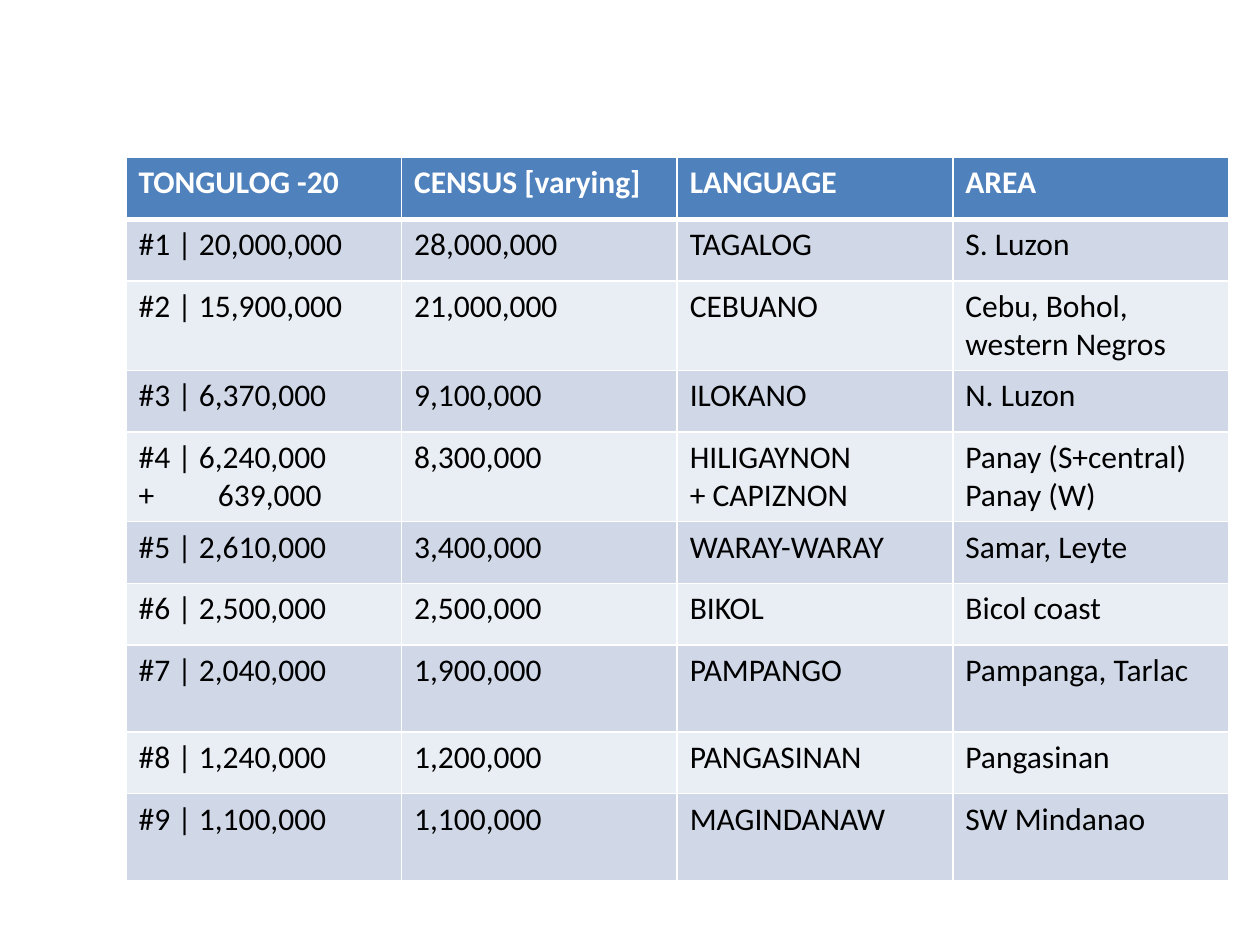
from typing import NamedTuple

from lxml import etree
from pptx import Presentation
from pptx.dml.color import RGBColor
from pptx.oxml import ns
from pptx.util import Inches, Pt

WHITE = RGBColor(0xFF, 0xFF, 0xFF)
BLACK = RGBColor(0x00, 0x00, 0x00)
BLUE = RGBColor(0x4F, 0x81, 0xBD)
BANDS = (RGBColor(0xE9, 0xED, 0xF4), RGBColor(0xD0, 0xD8, 0xE8))

LOW, TALL = 0.49, 0.69  # row heights in inches
THIN, THICK = 1, 3  # border widths in points
TAB = 0.63  # inches from the cell's text edge


class Row(NamedTuple):
    count: str
    census: str
    tongue: str
    area: str
    height: float = LOW


# \n starts a paragraph, \v breaks a line
ROWS = (
    Row("TONGULOG -20", "CENSUS [varying]", "LANGUAGE", "AREA"),
    Row("#1 | 20,000,000", "28,000,000", "TAGALOG", "S. Luzon"),
    Row("#2 | 15,900,000", "21,000,000", "CEBUANO", "Cebu, Bohol, western Negros"),
    Row("#3 | 6,370,000", "9,100,000", "ILOKANO", "N. Luzon"),
    Row("#4 | 6,240,000\v+\t639,000", "8,300,000", "HILIGAYNON\v+ CAPIZNON",
        "Panay (S+central)\nPanay (W)"),
    Row("#5 | 2,610,000", "3,400,000", "WARAY-WARAY", "Samar, Leyte"),
    Row("#6 | 2,500,000", "2,500,000", "BIKOL", "Bicol coast"),
    Row("#7 | 2,040,000", "1,900,000", "PAMPANGO", "Pampanga, Tarlac", TALL),
    Row("#8 | 1,240,000", "1,200,000", "PANGASINAN", "Pangasinan"),
    Row("#9 | 1,100,000", "1,100,000", "MAGINDANAW", "SW Mindanao", TALL),
)


def add_edge(cell, side: str, width: float) -> None:
    """Draw one white border; sides go in the order L, R, T, B."""
    props = cell._tc.get_or_add_tcPr()
    line = etree.SubElement(props, ns.qn(f"a:ln{side}"), w=str(Pt(width)))
    fill = etree.SubElement(line, ns.qn("a:solidFill"))
    etree.SubElement(fill, ns.qn("a:srgbClr"), val=str(WHITE))


def add_tab(para, inches: float) -> None:
    stops = etree.SubElement(para._p.get_or_add_pPr(), ns.qn("a:tabLst"))
    etree.SubElement(stops, ns.qn("a:tab"), pos=str(Inches(inches)), algn="l")


def fill_cell(cell, words: str, index: int) -> None:
    head = index == 0
    # Borders: a thick line parts the header from the body
    add_edge(cell, "L", THIN)
    add_edge(cell, "R", THIN)
    add_edge(cell, "T", THICK if index == 1 else THIN)
    add_edge(cell, "B", THICK if head else THIN)
    cell.fill.solid()
    cell.fill.fore_color.rgb = BLUE if head else BANDS[index % 2]
    # Text
    cell.text_frame.text = words
    for para in cell.text_frame.paragraphs:
        if "\t" in para.text:
            add_tab(para, TAB)
        font = para.font
        font.name, font.size, font.bold = "Calibri", Pt(18), head
        font.color.rgb = WHITE if head else BLACK


def main() -> None:
    deck = Presentation()
    deck.slide_width, deck.slide_height = Inches(10), Inches(7.5)
    slide = deck.slides.add_slide(deck.slide_layouts[6])

    # Language table
    total = sum(row.height for row in ROWS)
    table = slide.shapes.add_table(len(ROWS), 4, Inches(1), Inches(1.25),
                                   Inches(8.75), Inches(total)).table
    for index, row in enumerate(ROWS):
        table.rows[index].height = Inches(row.height)
        for col, words in enumerate(row[:4]):
            fill_cell(table.cell(index, col), words, index)

    deck.save("out.pptx")


if __name__ == "__main__":
    main()
